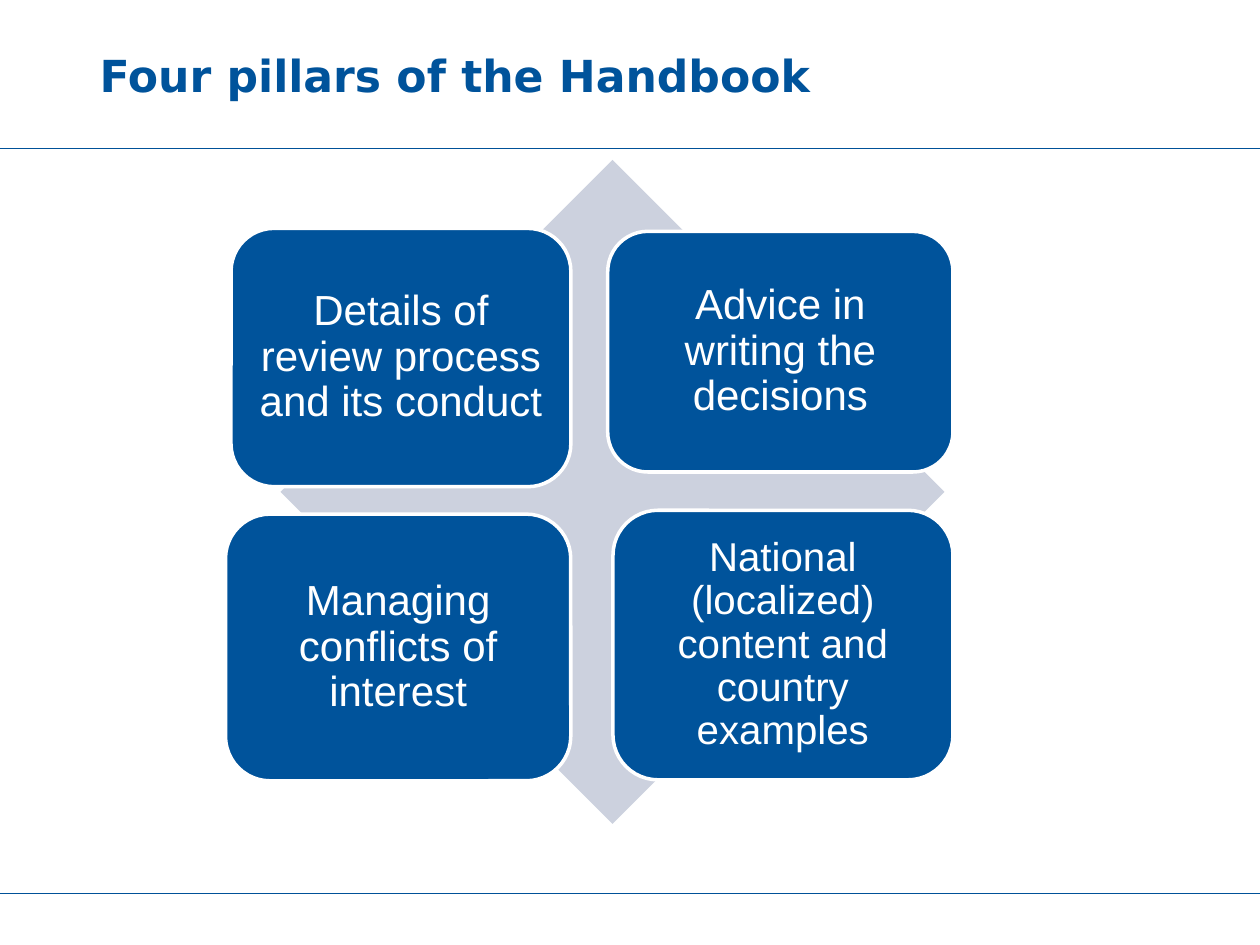
"""Build the slide on the four pillars of the Handbook."""
import pptx
import pptx.util
import pptx.dml.color
import pptx.enum.shapes
import pptx.enum.text
import pptx.oxml

Pt = pptx.util.Pt
RGBColor = pptx.dml.color.RGBColor
Shape = pptx.enum.shapes.MSO_SHAPE
Align = pptx.enum.text.PP_ALIGN

BLUE = RGBColor(0x00, 0x53, 0x9B)
RULE_BLUE = RGBColor(0x00, 0x51, 0x98)
PALE = RGBColor(0xCC, 0xD1, 0xDE)
WHITE = RGBColor(0xFF, 0xFF, 0xFF)

SLIDE_WIDTH, SLIDE_HEIGHT = 720, 540
HEADING = "Four pillars of the Handbook"
HEADING_BOX = (56.9, 0, 465, 85)
RULE_TOPS = (85, 510.5)
DIAMOND_BOX = (160.3, 91.4, 379.4, 379.4)
PILLARS = [
    ("Details of review process and its conduct", 24, (132, 130.5, 194.2, 147.6)),
    ("Advice in writing the decisions", 24, (347.3, 132.2, 197.3, 137.5)),
    ("Managing conflicts of interest", 24, (128.9, 293.8, 197.3, 152.4)),
    ("National (localized) content and country examples", 23, (350.3, 291.6, 194.3, 154)),
]


def write(frame, text, *, size, font, color, bold=False, align=Align.LEFT, spacing=1.0, inset=0):
    frame.word_wrap = True
    frame.auto_size = pptx.enum.text.MSO_AUTO_SIZE.NONE
    frame.vertical_anchor = pptx.enum.text.MSO_ANCHOR.MIDDLE
    frame.margin_left = frame.margin_right = Pt(inset)
    frame.margin_top = frame.margin_bottom = Pt(inset)
    paragraph = frame.paragraphs[0]
    paragraph.alignment = align
    paragraph.line_spacing = spacing
    run = paragraph.add_run()
    run.text = text
    run.font.size = Pt(size)
    run.font.name = font
    run.font.bold = bold
    run.font.color.rgb = color


def add_rule(slide, top):
    rule = slide.shapes.add_connector(
        pptx.enum.shapes.MSO_CONNECTOR.STRAIGHT, Pt(0), Pt(top), Pt(SLIDE_WIDTH), Pt(top))
    rule.line.color.rgb = RULE_BLUE
    rule.line.width = Pt(0.25)
    properties = rule.line._get_or_add_ln().getparent()
    properties.append(pptx.oxml.parse_xml(
        '<a:effectLst xmlns:a="http://schemas.openxmlformats.org/drawingml/2006/main"/>'))


def add_filled(slide, preset, box, fill):
    shape = slide.shapes.add_shape(preset, *map(Pt, box))
    shape.shadow.inherit = False
    shape.fill.solid()
    shape.fill.fore_color.rgb = fill
    shape.line.fill.background()
    return shape


def main():
    deck = pptx.Presentation()
    deck.slide_width, deck.slide_height = Pt(SLIDE_WIDTH), Pt(SLIDE_HEIGHT)
    slide = deck.slides.add_slide(deck.slide_layouts[5])

    heading = slide.shapes.title
    heading.left, heading.top, heading.width, heading.height = map(Pt, HEADING_BOX)
    write(heading.text_frame, HEADING, size=25.2, font="DejaVu Sans", color=BLUE, bold=True)

    for top in RULE_TOPS:
        add_rule(slide, top)
    add_filled(slide, Shape.DIAMOND, DIAMOND_BOX, PALE)
    for text, size, box in PILLARS:
        pillar = add_filled(slide, Shape.ROUNDED_RECTANGLE, box, BLUE)
        pillar.line.color.rgb = WHITE
        pillar.line.width = Pt(2)
        write(pillar.text_frame, text, size=size, font="Arial", color=WHITE,
              align=Align.CENTER, spacing=0.9, inset=7.2)

    deck.save("out.pptx")


if __name__ == "__main__":
    main()
